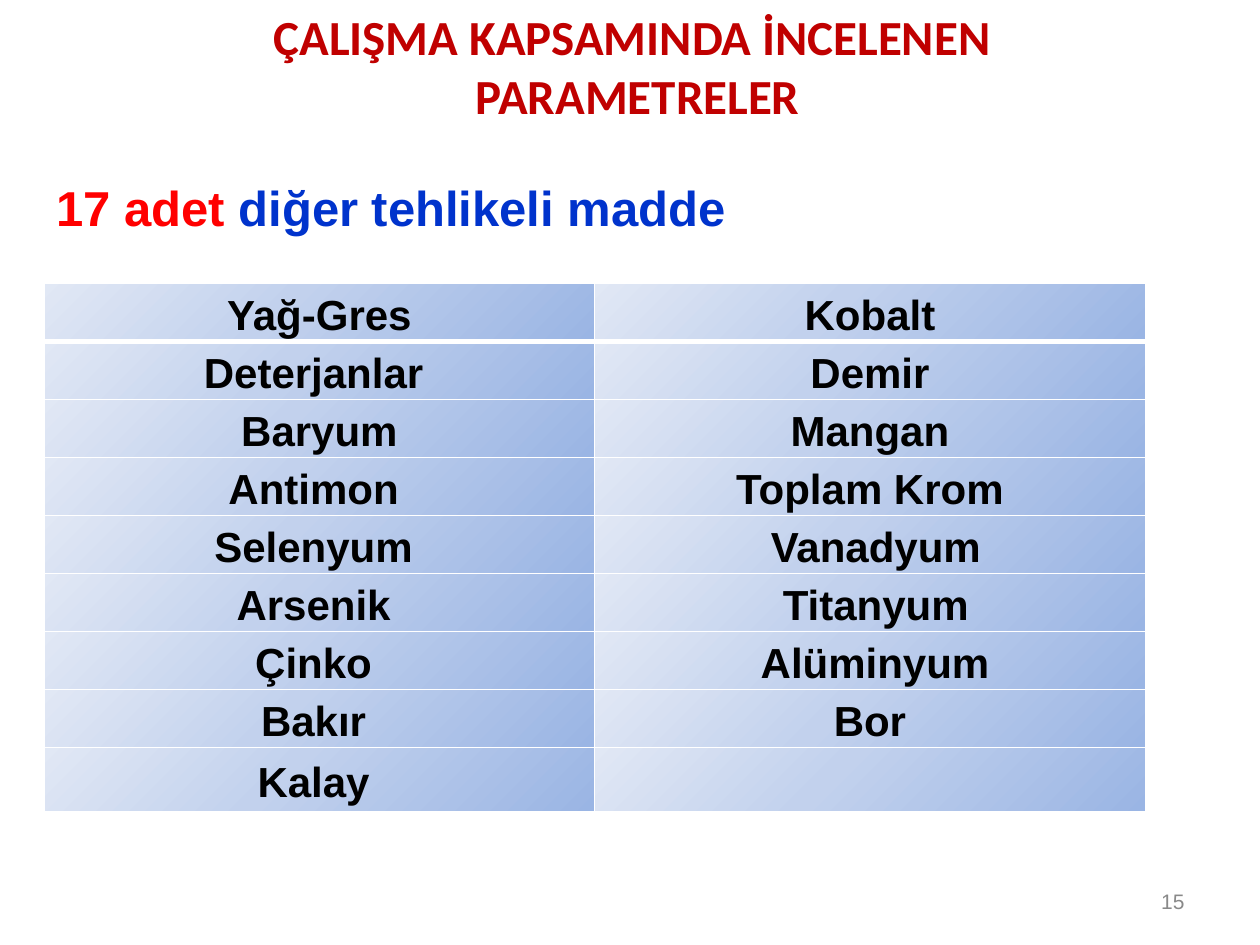
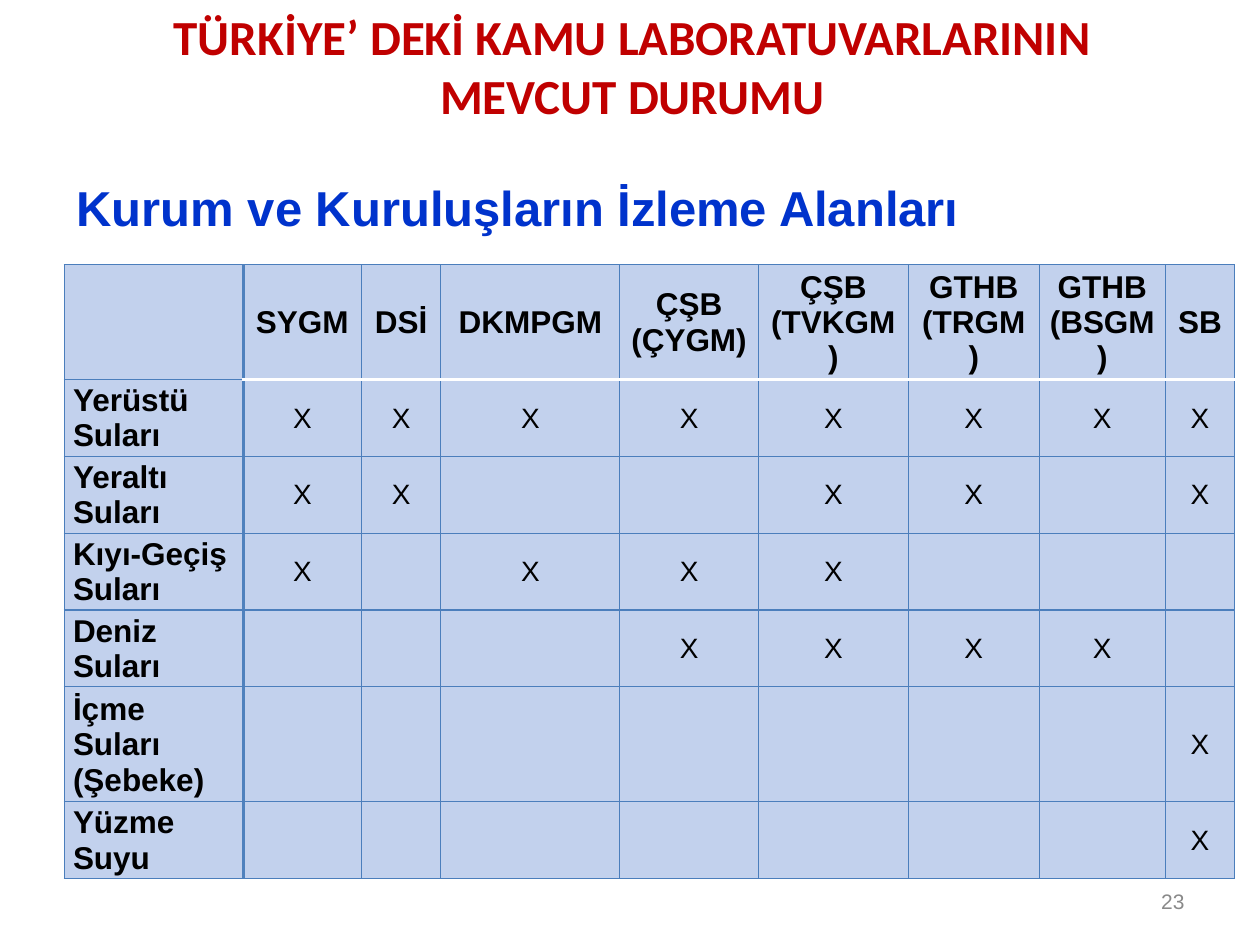
import pptx
import pptx.util
import pptx.dml.color
import pptx.enum.text
import pptx.oxml
import pptx.oxml.ns

Inches = pptx.util.Inches
Pt = pptx.util.Pt
ALIGN = pptx.enum.text.PP_ALIGN
MIDDLE = pptx.enum.text.MSO_ANCHOR.MIDDLE
TOP = pptx.enum.text.MSO_ANCHOR.TOP

RED, BRIGHT_RED, BLUE, GREY = "C00000", "FF0000", "0033CC", "898989"
BLACK, WHITE, GRID_BLUE, DIVIDER_BLUE = "000000", "FFFFFF", "4B7EBC", "4F81BD"
CELL_BLUE = "C2D1ED"
CELL_GRADIENT = [(0, "9AB5E4"), (57, "C2D1ED"), (100, "E1E8F5")]

PARAMETERS = {
    "title": "ÇALIŞMA KAPSAMINDA İNCELENEN \nPARAMETRELER",
    "number": "15",
    "left": 0.35,
    "heading": [("17 adet ", BRIGHT_RED), ("diğer tehlikeli madde", BLUE)],
}
SUBSTANCES = [
    ("Yağ-Gres", " Kobalt "),
    ("Deterjanlar ", " Demir "),
    ("Baryum", " Mangan "),
    ("Antimon ", " Toplam Krom "),
    ("Selenyum ", " Vanadyum"),
    ("Arsenik ", " Titanyum"),
    ("Çinko ", " Alüminyum"),
    ("Bakır ", " Bor "),
    ("Kalay ", ""),
]

LABORATORIES = {
    "title": "TÜRKİYE’ DEKİ KAMU LABORATUVARLARININ \nMEVCUT DURUMU ",
    "number": "23",
    "left": 0.51,
    "heading": [("Kurum ve Kuruluşların İzleme Alanları", BLUE)],
}
INSTITUTIONS = [
    ("SYGM", 0.94), ("DSİ", 0.63), ("DKMPGM", 1.42), ("ÇŞB (ÇYGM)", 1.1),
    ("ÇŞB (TVKGM)", 1.19), ("GTHB (TRGM)", 1.04), ("GTHB\n(BSGM)", 1), ("SB", 0.55),
]
WATER_COLUMN_WIDTH = 1.42
HEADER_HEIGHT = 0.9
MONITORED_WATERS = [
    ("Yerüstü Suları", "XXXXXXXX", 0.61),
    ("Yeraltı Suları", "XX--XX-X", 0.61),
    ("Kıyı-Geçiş Suları", "X-XXX---", 0.61),
    ("Deniz Suları", "---XXXX-", 0.61),
    ("İçme Suları (Şebeke)", "-------X", 0.91),
    ("Yüzme Suyu", "-------X", 0.61),
]


def color(hex_code):
    return pptx.dml.color.RGBColor.from_string(hex_code)


def write_text(frame, text, size=18, font="Arial", hex_code=BLACK, bold=True,
               align=ALIGN.CENTER, line_spacing=None):
    runs = [(text, hex_code)] if isinstance(text, str) else text
    paragraph = frame.paragraphs[0]
    paragraph.alignment = align
    paragraph.line_spacing = line_spacing
    paragraph.font.size = Pt(size)
    for run_text, run_color in runs:
        for index, line in enumerate(run_text.split("\n")):
            if index:
                paragraph.add_line_break()
            run = paragraph.add_run()
            run.text = line
            run.font.name = font
            run.font.size = Pt(size)
            run.font.bold = bold
            run.font.color.rgb = color(run_color)


def add_text_box(slide, left, top, width, height, text, anchor=MIDDLE, top_margin=0.05,
                 **text_format):
    shape = slide.shapes.add_textbox(Inches(left), Inches(top), Inches(width), Inches(height))
    frame = shape.text_frame
    frame.word_wrap = True
    frame.vertical_anchor = anchor
    frame.margin_top = Inches(top_margin)
    write_text(frame, text, **text_format)


def add_base_slide(presentation, content):
    slide = presentation.slides.add_slide(presentation.slide_layouts[6])
    add_text_box(slide, 0.12, -0.03, 9.88, 1.1, content["title"],
                 size=28, font="Calibri", hex_code=RED)
    add_text_box(slide, 7.17, 6.95, 2.33, 0.4, content["number"],
                 size=12, hex_code=GREY, bold=False, align=ALIGN.RIGHT)
    add_text_box(slide, content["left"], 1.31, 9.25, 0.57, content["heading"],
                 anchor=TOP, top_margin=0.1, size=28, align=ALIGN.JUSTIFY)
    return slide


def add_grid(slide, left, top, widths, heights):
    frame = slide.shapes.add_table(len(heights), len(widths), Inches(left), Inches(top),
                                   Inches(sum(widths)), Inches(sum(heights)))
    table = frame.table
    table.first_row = False
    table.horz_banding = False
    for column, width in zip(table.columns, widths):
        column.width = Inches(width)
    for row, height in zip(table.rows, heights):
        row.height = Inches(height)
    return table


def fill_gradient(cell, stops):
    stop_xml = "".join(
        f'<a:gs pos="{position * 1000}"><a:srgbClr val="{hex_code}"/></a:gs>'
        for position, hex_code in stops)
    cell._tc.get_or_add_tcPr().append(pptx.oxml.parse_xml(
        f'<a:gradFill {pptx.oxml.ns.nsdecls("a")} rotWithShape="1"><a:gsLst>{stop_xml}</a:gsLst>'
        '<a:path path="circle"><a:fillToRect l="100000" t="100000"/></a:path></a:gradFill>'))


def set_borders(cell, default, **special):
    properties = cell._tc.get_or_add_tcPr()
    for index, side in enumerate("LRTB"):
        hex_code, width = special.get(side, default)
        properties.insert(index, pptx.oxml.parse_xml(
            f'<a:ln{side} {pptx.oxml.ns.nsdecls("a")} w="{Pt(width)}"><a:solidFill>'
            f'<a:srgbClr val="{hex_code}"/></a:solidFill></a:ln{side}>'))


def write_cell(cell, text, top_margin=0, **text_format):
    cell.vertical_anchor = MIDDLE
    cell.margin_left = cell.margin_right = Inches(0.07)
    cell.margin_top = Inches(top_margin)
    cell.margin_bottom = 0
    write_text(cell.text_frame, text, **text_format)


def build_parameters(presentation):
    slide = add_base_slide(presentation, PARAMETERS)
    heights = [0.46] * (len(SUBSTANCES) - 1) + [0.51]
    table = add_grid(slide, PARAMETERS["left"], 2.25, [4.37, 4.37], heights)
    for row, names in enumerate(SUBSTANCES):
        special = {0: {"B": (WHITE, 3)}, 1: {"T": (WHITE, 3)}}.get(row, {})
        for column, name in enumerate(names):
            cell = table.cell(row, column)
            write_cell(cell, name, size=24, line_spacing=1.15)
            fill_gradient(cell, CELL_GRADIENT)
            set_borders(cell, (WHITE, 1), **special)


def build_laboratories(presentation):
    slide = add_base_slide(presentation, LABORATORIES)
    widths = [WATER_COLUMN_WIDTH] + [width for name, width in INSTITUTIONS]
    heights = [HEADER_HEIGHT] + [height for water, marks, height in MONITORED_WATERS]
    rows = [[""] + [name for name, width in INSTITUTIONS]]
    rows += [[water, *marks.replace("-", " ")] for water, marks, height in MONITORED_WATERS]
    table = add_grid(slide, LABORATORIES["left"], 2.1, widths, heights)
    for row, texts in enumerate(rows):
        for column, text in enumerate(texts):
            cell = table.cell(row, column)
            is_mark = row > 0 and column > 0
            write_cell(cell, text.strip(), top_margin=0.01, size=16 if is_mark else 18,
                       bold=not is_mark, align=ALIGN.CENTER if column else ALIGN.LEFT)
            cell.fill.solid()
            cell.fill.fore_color.rgb = color(CELL_BLUE)
            special = {}
            if column < 2:
                special["L" if column else "R"] = (DIVIDER_BLUE, 2)
            if column and row < 2:
                special["T" if row else "B"] = (WHITE, 2)
            set_borders(cell, (GRID_BLUE, 0.75), **special)


def main():
    presentation = pptx.Presentation()
    presentation.slide_width = Inches(10)
    presentation.slide_height = Inches(7.5)
    build_parameters(presentation)
    build_laboratories(presentation)
    presentation.save("out.pptx")


if __name__ == "__main__":
    main()
